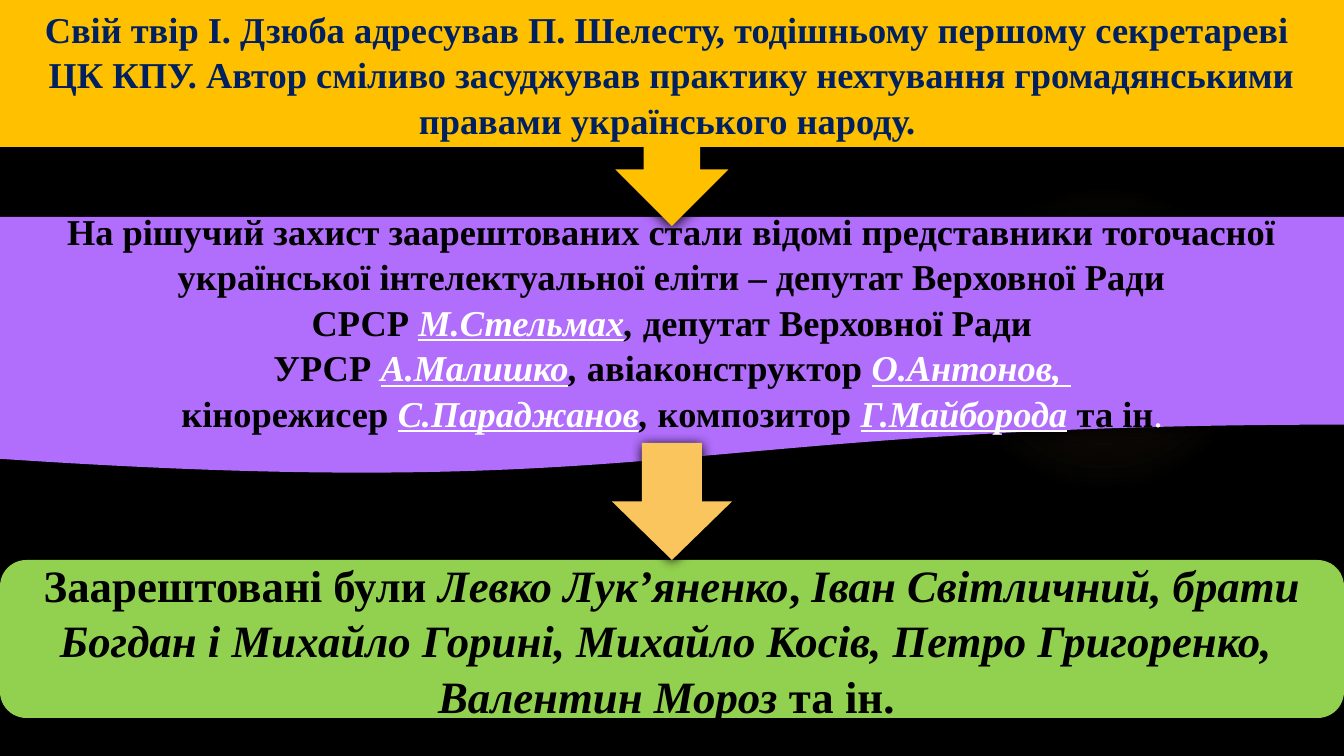
"""Build the slide on the address to Shelest, the defenders and the arrested."""
from dataclasses import dataclass

from lxml.etree import SubElement
from pptx import Presentation
from pptx.dml.color import RGBColor as Color
from pptx.enum.shapes import MSO_SHAPE as Shape
from pptx.enum.text import MSO_ANCHOR as Anchor, PP_ALIGN as Align
from pptx.oxml import parse_xml
from pptx.oxml.ns import nsdecls, qn
from pptx.util import Emu, Pt

WIDTH, HEIGHT = 1344, 756


@dataclass(frozen=True)
class Theme:
    """Colours and type sizes of the slide."""
    font: str = "Times New Roman"
    body: int = 26
    large: int = 32
    line_spacing: float = 1.04
    black: str = "000000"
    white: str = "FFFFFF"
    navy: str = "002060"
    amber: str = "FFC000"
    purple: str = "B16DFB"
    green: str = "92D050"
    sand: str = "FAC55C"
    glow: str = "FAC96A"


THEME = Theme()

ADDRESS = [
    [("Свій твір І. Дзюба адресував П. Шелесту, тодішньому першому секретареві ", "plain")],
    [("ЦК КПУ. Автор сміливо засуджував практику нехтування громадянськими "
      "правами українського народу.~", "plain")],
]
DEFENDERS = [
    [("На рішучий захист заарештованих стали відомі представники тогочасної "
      "української інтелектуальної еліти~–~депутат Верховної Ради СРСР~", "plain"),
     ("М.Стельмах", "name"), (",~", "italic"),
     ("депутат Верховної Ради УРСР~", "plain"),
     ("А.Малишко", "name"), (",~", "italic"),
     ("авіаконструктор~", "plain"), ("О.Антонов,~", "name")],
    [("кінорежисер~", "plain"), ("С.Параджанов", "name"), (",~", "italic"),
     ("композитор~", "plain"), ("Г.Майборода", "name"),
     ("~та ін", "plain"), (".", "light")],
]
ARRESTED = [
    [("Заарештовані були~", "plain"), ("Левко Лук’яненко", "italic"), (", ", "plain"),
     ("Іван Світличний, брати Богдан і Михайло Горині, Михайло Косів, "
      "Петро Григоренко, ", "italic")],
    [("Валентин Мороз~", "italic"), ("та ін.~", "plain")],
]


def px(length):
    """Turn pixels into EMU."""
    return Emu(round(length * 914400 / 100.8))


def add_block(slide, kind, box, color):
    """Add a borderless filled shape with a soft dark shadow."""
    shape = slide.shapes.add_shape(kind, *map(px, box))
    shape.fill.solid()
    shape.fill.fore_color.rgb = Color.from_string(color)
    shape.line.fill.background()
    shape.shadow.inherit = False
    effects = shape._element.spPr.find(qn("a:effectLst"))
    shadow = SubElement(effects, qn("a:outerShdw"), blurRad=str(Pt(8.5)),
                        dist=str(Pt(1)), dir="5400000", rotWithShape="0")
    SubElement(shadow, qn("a:srgbClr"), val=THEME.black)
    return shape


def add_glow(slide, box):
    """Add a faint round glow that fades to its edge."""
    shape = slide.shapes.add_shape(Shape.OVAL, *map(px, box))
    shape.line.fill.background()
    shape.shadow.inherit = False
    stops = "".join(
        f'<a:gs pos="{position}000"><a:srgbClr val="{THEME.glow}">'
        f'<a:alpha val="{alpha}000"/></a:srgbClr></a:gs>'
        for position, alpha in ((0, 7), (36, 6), (69, 0)))
    gradient = parse_xml(
        f'<a:gradFill {nsdecls("a")}><a:gsLst>{stops}</a:gsLst><a:path path="circle">'
        '<a:fillToRect l="50000" t="50000" r="50000" b="50000"/></a:path></a:gradFill>')
    shape._element.spPr.find(qn("a:prstGeom")).addnext(gradient)


def add_run(paragraph, text, style, color):
    """Add a run, with ~ standing for a no-break space."""
    run = paragraph.add_run()
    run.text = text.replace("~", chr(160))
    font = run.font
    font.color.rgb = Color.from_string(THEME.white if style in ("name", "light") else color)
    if style in ("name", "italic"):
        font.italic = True
    if style == "name":
        font.underline = True
    if style == "light":
        font.bold = False


def write_text(shape, paragraphs, size, color):
    """Fill a shape with centred bold paragraphs."""
    frame = shape.text_frame
    frame.word_wrap = True
    frame.vertical_anchor = Anchor.MIDDLE
    for index, runs in enumerate(paragraphs):
        paragraph = frame.add_paragraph() if index else frame.paragraphs[0]
        paragraph.alignment = Align.CENTER
        paragraph.line_spacing = THEME.line_spacing
        paragraph.font.name = THEME.font
        paragraph.font.size = Pt(size)
        paragraph.font.bold = True
        for text, style in runs:
            add_run(paragraph, text, style, color)


def main():
    """Build and save the slide."""
    presentation = Presentation()
    presentation.slide_width, presentation.slide_height = px(WIDTH), px(HEIGHT)
    slide = presentation.slides.add_slide(presentation.slide_layouts[6])
    slide.background.fill.solid()
    slide.background.fill.fore_color.rgb = Color.from_string(THEME.black)

    add_glow(slide, (949, 184, 310, 310))
    defenders = add_block(slide, Shape.FLOWCHART_DOCUMENT, (0, 217, WIDTH, 259), THEME.purple)
    write_text(defenders, DEFENDERS, THEME.body, THEME.black)
    address = add_block(slide, Shape.DOWN_ARROW_CALLOUT, (0, 0, WIDTH, 226), THEME.amber)
    write_text(address, ADDRESS, THEME.body, THEME.navy)
    arrested = add_block(slide, Shape.FLOWCHART_ALTERNATE_PROCESS, (0, 560, WIDTH, 158),
                         THEME.green)
    write_text(arrested, ARRESTED, THEME.large, THEME.black)
    add_block(slide, Shape.DOWN_ARROW, (612, 443, 120, 117), THEME.sand)

    presentation.save("out.pptx")


if __name__ == "__main__":
    main()
